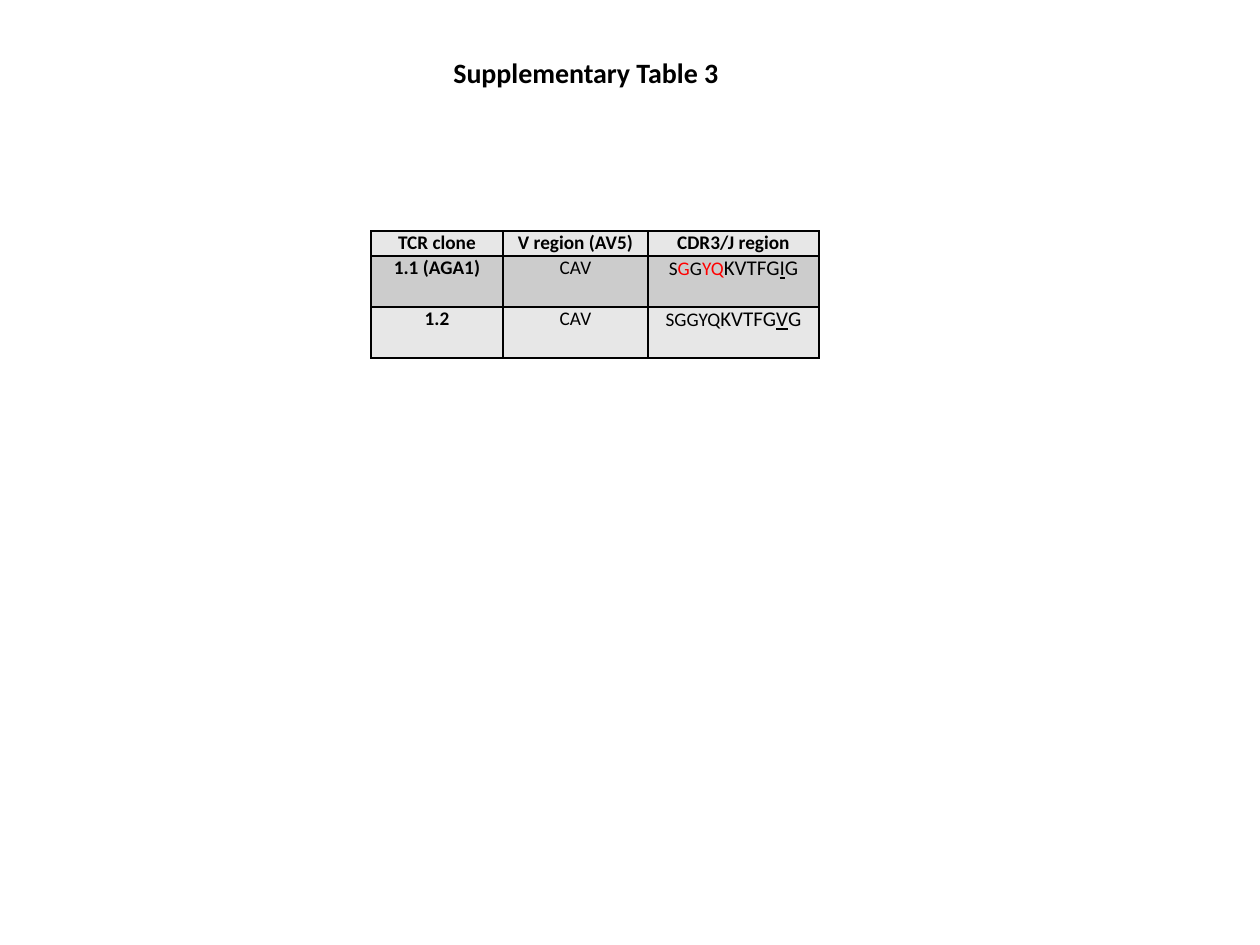
from pptx import Presentation
from pptx.dml.color import RGBColor
from pptx.enum.text import MSO_ANCHOR, PP_ALIGN
from pptx.oxml import parse_xml
from pptx.oxml.ns import nsdecls
from pptx.util import Pt

PX = 914400 / 126
INK = {"black": "000000", "red": "FF0000", "light": "E7E7E7", "dark": "CCCCCC"}


def px(*vals):
    """Turn pixel lengths into EMU."""
    return [round(v * PX) for v in vals]


def add_run(para, text, size=11, color="black", bold=False, under=False):
    """Add one formatted run to a paragraph."""
    run = para.add_run()
    run.text = text
    font = run.font
    font.name, font.size = "Calibri", Pt(size)
    font.bold, font.underline = bold, under
    font.color.rgb = RGBColor.from_string(INK[color])


deck = Presentation()
deck.slide_width, deck.slide_height = px(1260, 945)
slide = deck.slides.add_slide(deck.slide_layouts[5])

# Table: each cell is a list of runs (text, options)
bold, big, red = {"bold": True}, {"size": 12}, {"color": "red"}
under = {"size": 12, "under": True}
rows = [
    [[("TCR clone", bold)], [("V region (AV5)", bold)], [("CDR3/J region", bold)]],
    [[("1.1 (AGA1)", bold)], [("CAV", {})],
     [("S", {}), ("G", red), ("G", {}), ("YQ", red),
      ("KVTFG", big), ("I", under), ("G", big)]],
    [[("1.2", bold)], [("CAV", {})],
     [("SGGYQ", {}), ("KVTFG", big), ("V", under), ("G", big)]],
]
fills = ["light", "dark", "light"]
widths, heights = [132, 145, 171], [25, 51, 51]

frame = slide.shapes.add_table(
    3, 3, *px(371, 231, sum(widths), sum(heights)))
table = frame.table
for col, width in zip(table.columns, px(*widths)):
    col.width = width
for row, height in zip(table.rows, px(*heights)):
    row.height = height

for r, cells in enumerate(rows):
    for c, runs in enumerate(cells):
        cell = table.cell(r, c)
        cell.margin_left = cell.margin_right = px(9)[0]
        cell.margin_top = cell.margin_bottom = 0
        para = cell.text_frame.paragraphs[0]
        para.alignment = PP_ALIGN.CENTER
        for text, look in runs:
            add_run(para, text, **look)
        props = cell._tc.get_or_add_tcPr()
        for side in ("lnL", "lnR", "lnT", "lnB"):
            props.append(parse_xml(
                f'<a:{side} {nsdecls("a")} w="12700"><a:solidFill>'
                f'<a:srgbClr val="{INK["black"]}"/></a:solidFill></a:{side}>'))
        cell.fill.solid()
        cell.fill.fore_color.rgb = RGBColor.from_string(INK[fills[r]])

# Title
title = slide.shapes.title
title.left, title.top, title.width, title.height = px(19, -6, 1134, 157)
title.text_frame.vertical_anchor = MSO_ANCHOR.MIDDLE
para = title.text_frame.paragraphs[0]
para.alignment = PP_ALIGN.CENTER
add_run(para, "Supplementary Table 3", size=16, bold=True)

deck.save("out.pptx")
